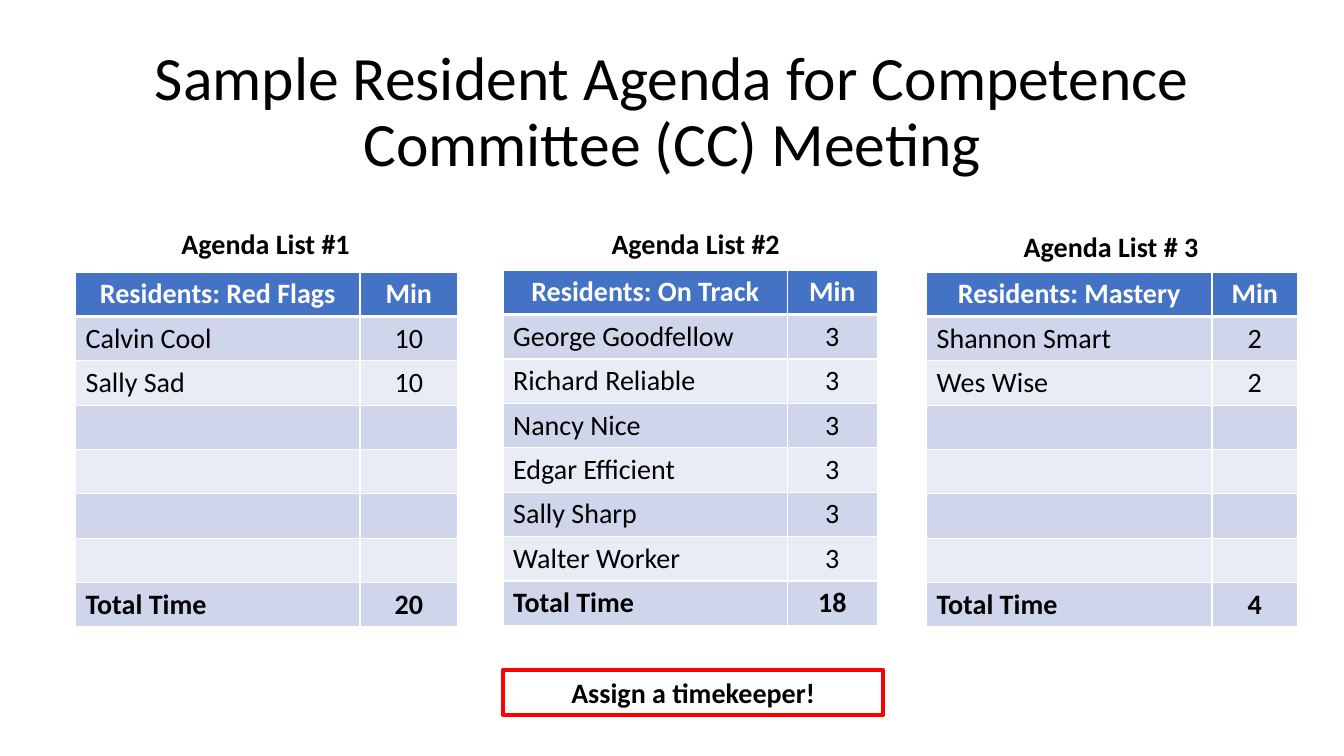
"""Build the resident agenda slide for a competence committee meeting."""
import pptx
import pptx.util
import pptx.dml.color
import pptx.enum.text
import pptx.oxml
import pptx.oxml.ns

Inches, Pt = pptx.util.Inches, pptx.util.Pt
RGBColor = pptx.dml.color.RGBColor
ALIGN = pptx.enum.text.PP_ALIGN

FONT = "Calibri"
BLACK = RGBColor(0x00, 0x00, 0x00)
WHITE = RGBColor(0xFF, 0xFF, 0xFF)
RED = RGBColor(0xFF, 0x00, 0x00)
BLUE = RGBColor(0x44, 0x72, 0xC4)
BANDS = (RGBColor(0xE9, 0xEB, 0xF5), RGBColor(0xCF, 0xD5, 0xEA))

TITLE = "Sample Resident Agenda for Competence Committee (CC) Meeting"
SLOTS = 6
ROW = 0.44
LISTS = [
    {"label": "Agenda List #2", "box": (5.87, 2.2, 2.06), "at": (4.99, 2.68),
     "cols": (2.82, 0.89), "group": "On Track", "min": 3,
     "names": ["George Goodfellow", "Richard Reliable", "Nancy Nice",
               "Edgar Efficient", "Sally Sharp", "Walter Worker"]},
    {"label": "Agenda List # 3", "box": (9.72, 2.23, 2.6), "at": (9.19, 2.7),
     "cols": (2.83, 0.85), "group": "Mastery", "min": 2,
     "names": ["Shannon Smart", "Wes Wise"]},
    {"label": "Agenda List #1", "box": (1.3, 2.2, 2.67), "at": (0.75, 2.7),
     "cols": (2.82, 0.97), "group": "Red Flags", "min": 10,
     "names": ["Calvin Cool", "Sally Sad"]},
]
NOTE = ("Assign a timekeeper!", (4.99, 6.65, 3.77))


def write(frame, text, size=20, bold=True, color=BLACK, align=ALIGN.CENTER):
    """Add one formatted run to the first paragraph."""
    para = frame.paragraphs[0]
    para.alignment = align
    run = para.add_run()
    run.text = text
    font = run.font
    font.name, font.size, font.bold = FONT, Pt(size), bold
    font.color.rgb = color
    return para


def add_label(slide, text, spot):
    """Add a bold centred text box."""
    box = slide.shapes.add_textbox(*map(Inches, (*spot, ROW)))
    box.text_frame.word_wrap = True
    write(box.text_frame, text)
    return box


def add_edges(cell, row):
    """Draw white cell borders, heavy below the header."""
    heavy = {(0, "lnB"), (1, "lnT")}
    for side in ("lnL", "lnR", "lnT", "lnB"):
        width = Pt(3 if (row, side) in heavy else 1)
        cell._tc.get_or_add_tcPr().append(pptx.oxml.parse_xml(
            f'<a:{side} {pptx.oxml.ns.nsdecls("a")} w="{width}"><a:solidFill>'
            f'<a:srgbClr val="{WHITE}"/></a:solidFill></a:{side}>'))


def add_list(slide, item):
    """Add one agenda table with its total row."""
    names, each, cols = item["names"], item["min"], item["cols"]
    rows = [("Residents: " + item["group"], "Min")]
    rows += [(name, str(each)) for name in names]
    rows += [("", "")] * (SLOTS - len(names))
    rows.append(("Total Time", str(each * len(names))))
    last = len(rows) - 1
    size = (sum(cols), ROW * len(rows))
    table = slide.shapes.add_table(
        len(rows), len(cols), *map(Inches, item["at"] + size)).table
    for col, width in zip(table.columns, cols):
        col.width = Inches(width)
    for r, row in enumerate(rows):
        table.rows[r].height = Inches(ROW)
        for c, text in enumerate(row):
            cell = table.cell(r, c)
            add_edges(cell, r)
            cell.fill.solid()
            cell.fill.fore_color.rgb = BANDS[r % 2] if r else BLUE
            if text:
                write(cell.text_frame, text, bold=r in (0, last),
                      color=BLACK if r else WHITE,
                      align=ALIGN.LEFT if r and c == 0 else ALIGN.CENTER)


def main():
    """Assemble and save the slide."""
    deck = pptx.Presentation()
    deck.slide_width, deck.slide_height = Inches(13.33), Inches(7.5)
    slide = deck.slides.add_slide(deck.slide_layouts[5])
    title = slide.shapes.title
    title.left, title.top, title.width, title.height = map(
        Inches, (0.92, 0.4, 11.5, 1.45))
    title.text_frame.vertical_anchor = pptx.enum.text.MSO_ANCHOR.MIDDLE
    write(title.text_frame, TITLE, size=44, bold=False).line_spacing = 0.9
    for item in LISTS:
        add_list(slide, item)
        add_label(slide, item["label"], item["box"])
    note = add_label(slide, *NOTE)
    note.line.color.rgb = RED
    note.line.width = Pt(3)
    deck.save("out.pptx")


if __name__ == "__main__":
    main()
